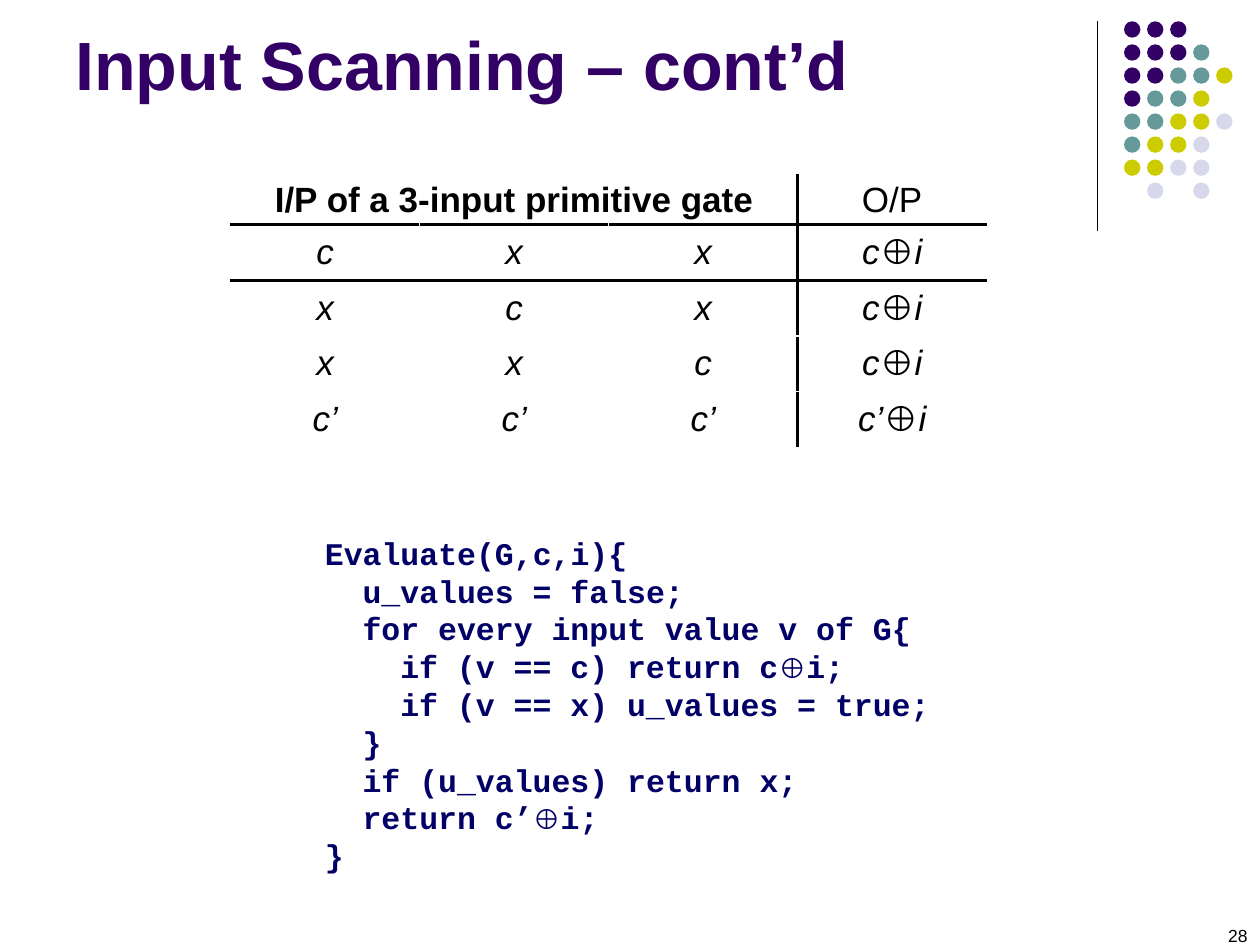
from dataclasses import dataclass

from lxml import etree
from pptx import Presentation
from pptx.dml.color import RGBColor
from pptx.enum.shapes import MSO_CONNECTOR, MSO_SHAPE
from pptx.enum.text import MSO_ANCHOR, PP_ALIGN
from pptx.oxml.ns import qn
from pptx.util import Cm, Pt

LEFT, CENTER, RIGHT = PP_ALIGN.LEFT, PP_ALIGN.CENTER, PP_ALIGN.RIGHT
MIDDLE = MSO_ANCHOR.MIDDLE
OVAL, STRAIGHT = MSO_SHAPE.OVAL, MSO_CONNECTOR.STRAIGHT

BLACK = RGBColor(0x00, 0x00, 0x00)
PURPLE = RGBColor(0x33, 0x00, 0x66)
TEAL = RGBColor(0x66, 0x99, 0x99)
LIME = RGBColor(0xCC, 0xCC, 0x00)
LILAC = RGBColor(0xD8, 0xD8, 0xEC)
NAVY = RGBColor(0x00, 0x00, 0x66)

XOR = "⊕"

# One letter per dot colour, a dot for a gap
DOT_COLORS = {"P": PURPLE, "T": TEAL, "L": LIME, "V": LILAC}
DOT_ROWS = ["PPP..", "PPPT.", "PPTTL", "PTTL.", "TTLLV", "TLLV.", "LLVV.", ".V.V."]
DOT_SIZE = Cm(0.33)
DOT_PITCH = Cm(3.25) // 7

TABLE_ROWS = [
    ["I/P of a 3-input primitive gate", "", "", "O/P"],
    ["c", "x", "x", "c⊕i"],
    ["x", "c", "x", "c⊕i"],
    ["x", "x", "c", "c⊕i"],
    ["c’", "c’", "c’", "c’⊕i"],
]
ROW_HEIGHTS = [Cm(1), Cm(1.12), Cm(1.12), Cm(1.12), Cm(1.14)]
OUTPUT_COL = 3

# Indent level and text of each line
CODE = [
    (0, "Evaluate(G,c,i){"),
    (1, "u_values = false;"),
    (1, "for every input value v of G{"),
    (2, "if (v == c) return c⊕i;"),
    (2, "if (v == x) u_values = true;"),
    (1, "}"),
    (1, "if (u_values) return x;"),
    (1, "return c’⊕i;"),
    (0, "}"),
]
CODE_INDENT = Cm(0.76)


@dataclass
class Style:
    size: float
    color: RGBColor
    name: str = "Arial"
    bold: bool = False
    italic: bool = False
    align: PP_ALIGN = LEFT


TITLE = Style(39, PURPLE, bold=True)
NUMBER = Style(10, BLACK, align=RIGHT)
HEADER = Style(20, BLACK, bold=True, align=CENTER)
OUTPUT_HEADER = Style(20, BLACK, align=CENTER)
VALUE = Style(20, BLACK, italic=True, align=CENTER)
LISTING = Style(18, NAVY, "Courier New", bold=True)


def write(p, text: str, style: Style, xor_size: float) -> None:
    """Fill a paragraph, setting each XOR sign upright in Arial."""
    p.alignment = style.align
    font = p.font
    font.size, font.name = Pt(style.size), style.name
    font.bold, font.italic = style.bold, style.italic
    font.color.rgb = style.color
    before, sign, after = text.partition(XOR)
    for part in filter(None, (before, sign, after)):
        r = p.add_run()
        r.text = part
        if part == XOR:
            r.font.size, r.font.name = Pt(xor_size), "Arial"
            r.font.italic = False


def add_text(s, left: Cm, top: Cm, width: Cm, height: Cm):
    tf = s.shapes.add_textbox(left, top, width, height).text_frame
    tf.word_wrap = True
    return tf


def set_border(cell, tag: str) -> None:
    tc_pr = cell._tc.get_or_add_tcPr()
    ln = etree.SubElement(tc_pr, qn(tag), w=str(Pt(2.25)))
    fill = etree.SubElement(ln, qn("a:solidFill"))
    etree.SubElement(fill, qn("a:srgbClr"), val=str(BLACK))


def add_dots(s) -> None:
    group = s.shapes.add_group_shape()
    for row, colors in enumerate(DOT_ROWS):
        for col, key in enumerate(colors):
            if key not in DOT_COLORS:
                continue
            sp = group.shapes.add_shape(
                OVAL, Cm(22.66) + col * DOT_PITCH, Cm(0.43) + row * DOT_PITCH,
                DOT_SIZE, DOT_SIZE)
            sp.shadow.inherit = False
            sp.fill.solid()
            sp.fill.fore_color.rgb = DOT_COLORS[key]
            sp.line.fill.background()


def add_gate_table(s) -> None:
    table = s.shapes.add_table(
        len(TABLE_ROWS), 4, Cm(4.65), Cm(3.53), Cm(15.24), sum(ROW_HEIGHTS)).table
    table.first_row = table.horz_banding = False
    for col in table.columns:
        col.width = Cm(3.81)
    for row, height in zip(table.rows, ROW_HEIGHTS):
        row.height = height
    table.cell(0, 0).merge(table.cell(0, OUTPUT_COL - 1))

    for i, texts in enumerate(TABLE_ROWS):
        for j, text in enumerate(texts):
            cell = table.cell(i, j)
            cell.vertical_anchor = MIDDLE
            cell.margin_top = cell.margin_bottom = 0
            style = VALUE
            if i == 0:
                style = OUTPUT_HEADER if j == OUTPUT_COL else HEADER
            write(cell.text_frame.paragraphs[0], text, style, style.size)
            # Rules beside the output column and below the header
            if j == OUTPUT_COL:
                set_border(cell, "a:lnL")
            if j == OUTPUT_COL - 1 or (i == 0 and j == 0):
                set_border(cell, "a:lnR")
            if i == 1:
                set_border(cell, "a:lnT")
            if i == 0:
                set_border(cell, "a:lnB")
            cell.fill.background()


def add_code(s) -> None:
    tf = add_text(s, Cm(6.3), Cm(10.52), Cm(13.41), Cm(7.39))
    tf.margin_top = Cm(0.24)
    for i, (level, text) in enumerate(CODE):
        p = tf.paragraphs[0] if i == 0 else tf.add_paragraph()
        p.line_spacing = Pt(21.6)
        write(p, text, LISTING, 16)
        p._p.get_or_add_pPr().set("marL", str(level * CODE_INDENT))


def main() -> None:
    prs = Presentation()
    prs.slide_width, prs.slide_height = Cm(25.4), Cm(19.05)
    s = prs.slides.add_slide(prs.slide_layouts[6])

    # Corner decoration
    line = s.shapes.add_connector(STRAIGHT, Cm(22.12), Cm(0.43), Cm(22.12), Cm(4.65))
    line.line.color.rgb = BLACK
    line.line.width = Pt(0.75)
    etree.SubElement(line._element.spPr, qn("a:effectLst"))
    add_dots(s)

    # Slide number and title
    tf = add_text(s, Cm(19.48), Cm(18.52), Cm(5.92), Cm(0.53))
    write(tf.paragraphs[0], "28", NUMBER, NUMBER.size)
    tf = add_text(s, Cm(1.27), Cm(0.33), Cm(20.95), Cm(3.61))
    write(tf.paragraphs[0], "Input Scanning – cont’d", TITLE, TITLE.size)

    # Truth table and code
    add_gate_table(s)
    add_code(s)
    prs.save("out.pptx")


if __name__ == "__main__":
    main()
